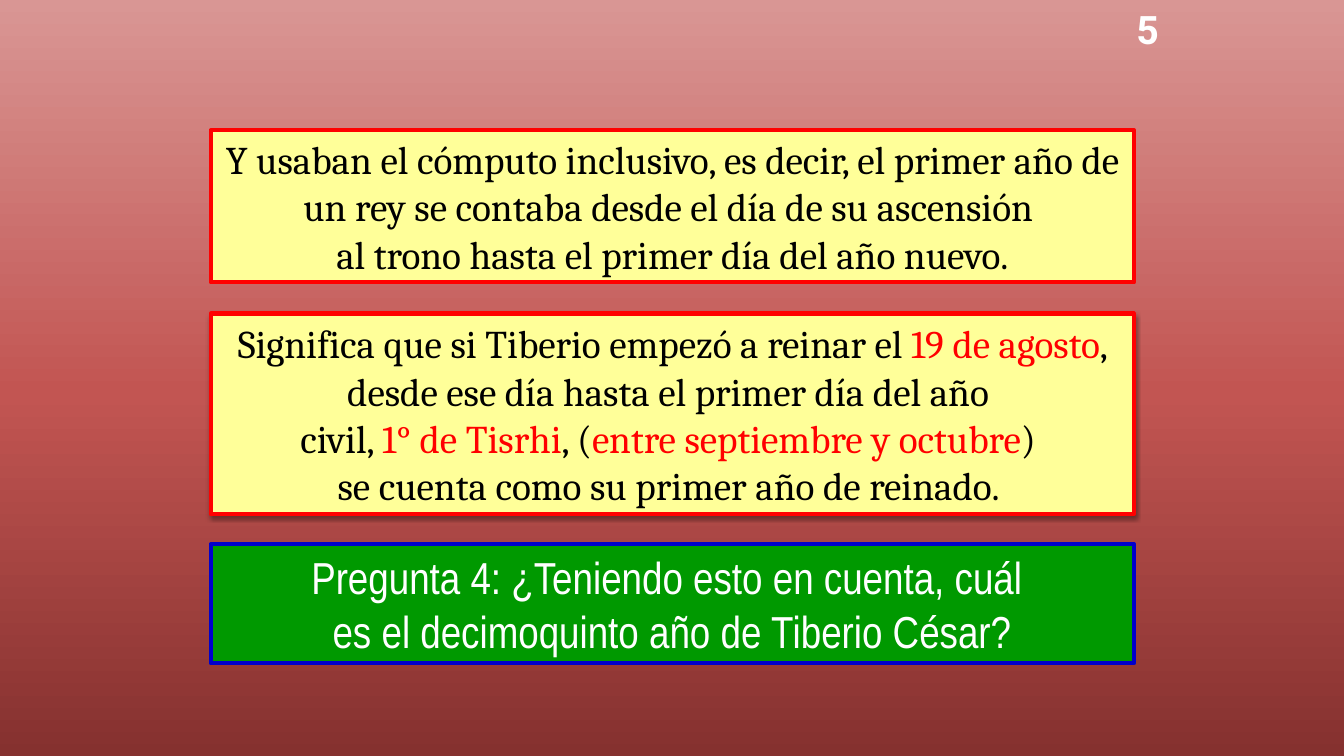
"""Build the slide on the inclusive reckoning of the years of Tiberius."""
import copy

import lxml.etree
import pptx
import pptx.dml.color
import pptx.enum.shapes
import pptx.enum.text
import pptx.oxml.ns
import pptx.util

Pt = pptx.util.Pt
RGB = pptx.dml.color.RGBColor
qn = pptx.oxml.ns.qn

BLACK = RGB(0x00, 0x00, 0x00)
WHITE = RGB(0xFF, 0xFF, 0xFF)
RED = RGB(0xFF, 0x00, 0x00)
BLUE = RGB(0x00, 0x00, 0xCC)
GREEN = RGB(0x00, 0x99, 0x00)
CREAM = RGB(0xFF, 0xFF, 0x99)
WINE = RGB(0x85, 0x31, 0x2F)
ROSE = RGB(0xC2, 0x55, 0x52)
PINK = RGB(0xD9, 0x96, 0x94)

LEFT, WIDTH = 150.5, 659.5

REIGN = [
    [("Y usaban el cómputo inclusivo, es decir, el primer año de un rey "
      "se contaba desde el día de su ascensión ", BLACK)],
    [("al trono hasta el primer día del año nuevo.", BLACK)],
]
DATES = [
    [("Significa que si Tiberio empezó a reinar el ", BLACK),
     ("19 de agosto", RED),
     (", desde ese día hasta el primer día del año ", BLACK)],
    [("civil, ", BLACK), ("1° de Tisrhi", RED), (", (", BLACK),
     ("entre septiembre y octubre", RED), (") ", BLACK)],
    [("se cuenta como su primer año de reinado. ", BLACK)],
]
QUERY = [
    [("Pregunta 4: ¿Teniendo esto en cuenta, cuál ", WHITE)],
    [("es el decimoquinto año de Tiberio César?", WHITE)],
]


def paint(slide):
    """Fill the background with three colours, dark at the foot."""
    fill = slide.background.fill
    fill.gradient()
    fill.gradient_angle = 90
    first = slide.element.find(".//" + qn("a:gs"))
    first.addnext(copy.deepcopy(first))
    for stop, color, place in zip(fill.gradient_stops, (WINE, ROSE, PINK), (0, 0.48, 1)):
        stop.color.rgb = color
        stop.position = place


def edge(run, color):
    """Outline the letters of a run."""
    line = lxml.etree.Element(qn("a:ln"), w=str(Pt(1.5)))
    fill = lxml.etree.SubElement(line, qn("a:solidFill"))
    lxml.etree.SubElement(fill, qn("a:srgbClr"), val=str(color))
    run.font.fill
    run._r.get_or_add_rPr().insert(0, line)


def write(frame, lines, face, size, bold=False, edged=False):
    """Write centred lines made of coloured pieces."""
    for index, pieces in enumerate(lines):
        para = frame.add_paragraph() if index else frame.paragraphs[0]
        para.alignment = pptx.enum.text.PP_ALIGN.CENTER
        para.font.name = face
        para.font.size = Pt(size)
        para.font.bold = bold
        for text, color in pieces:
            run = para.add_run()
            run.text = text
            run.font.color.rgb = color
            if edged:
                edge(run, color)


def panel(slide, top, height, fill, line):
    """Add a framed box and return it."""
    box = slide.shapes.add_shape(
        pptx.enum.shapes.MSO_SHAPE.RECTANGLE, Pt(LEFT), Pt(top), Pt(WIDTH), Pt(height))
    box.shadow.inherit = False
    box.fill.solid()
    box.fill.fore_color.rgb = fill
    box.line.color.rgb = line
    box.line.width = Pt(3)
    box.text_frame.word_wrap = True
    return box


def shade(box):
    """Cast a soft shadow below a box."""
    effects = box._element.spPr.find(qn("a:effectLst"))
    cast = lxml.etree.SubElement(
        effects, qn("a:outerShdw"), blurRad=str(Pt(3.1)), dist=str(Pt(1.6)),
        dir="5400000", rotWithShape="0")
    color = lxml.etree.SubElement(cast, qn("a:srgbClr"), val=str(BLACK))
    lxml.etree.SubElement(color, qn("a:alpha"), val="38000")


def number(slide, text):
    """Add the slide number at the top."""
    box = slide.shapes.add_textbox(Pt(803.5), Pt(0), Pt(32.5), Pt(41))
    box.text_frame.word_wrap = False
    write(box.text_frame, [[(text, WHITE)]], "Roboto", 28, bold=True)


def main():
    """Build and save the slide."""
    deck = pptx.Presentation()
    deck.slide_width, deck.slide_height = Pt(960), Pt(540)
    slide = deck.slides.add_slide(deck.slide_layouts[6])
    paint(slide)
    reign = panel(slide, 93, 108.7, CREAM, RED)
    write(reign.text_frame, REIGN, "Cambria", 28, edged=True)
    dates = panel(slide, 224, 143.3, CREAM, RED)
    shade(dates)
    write(dates.text_frame, DATES, "Cambria", 28, edged=True)
    number(slide, "5")
    query = panel(slide, 388.8, 85, GREEN, BLUE)
    write(query.text_frame, QUERY, "Arial Narrow", 32)
    deck.save("out.pptx")


if __name__ == "__main__":
    main()
